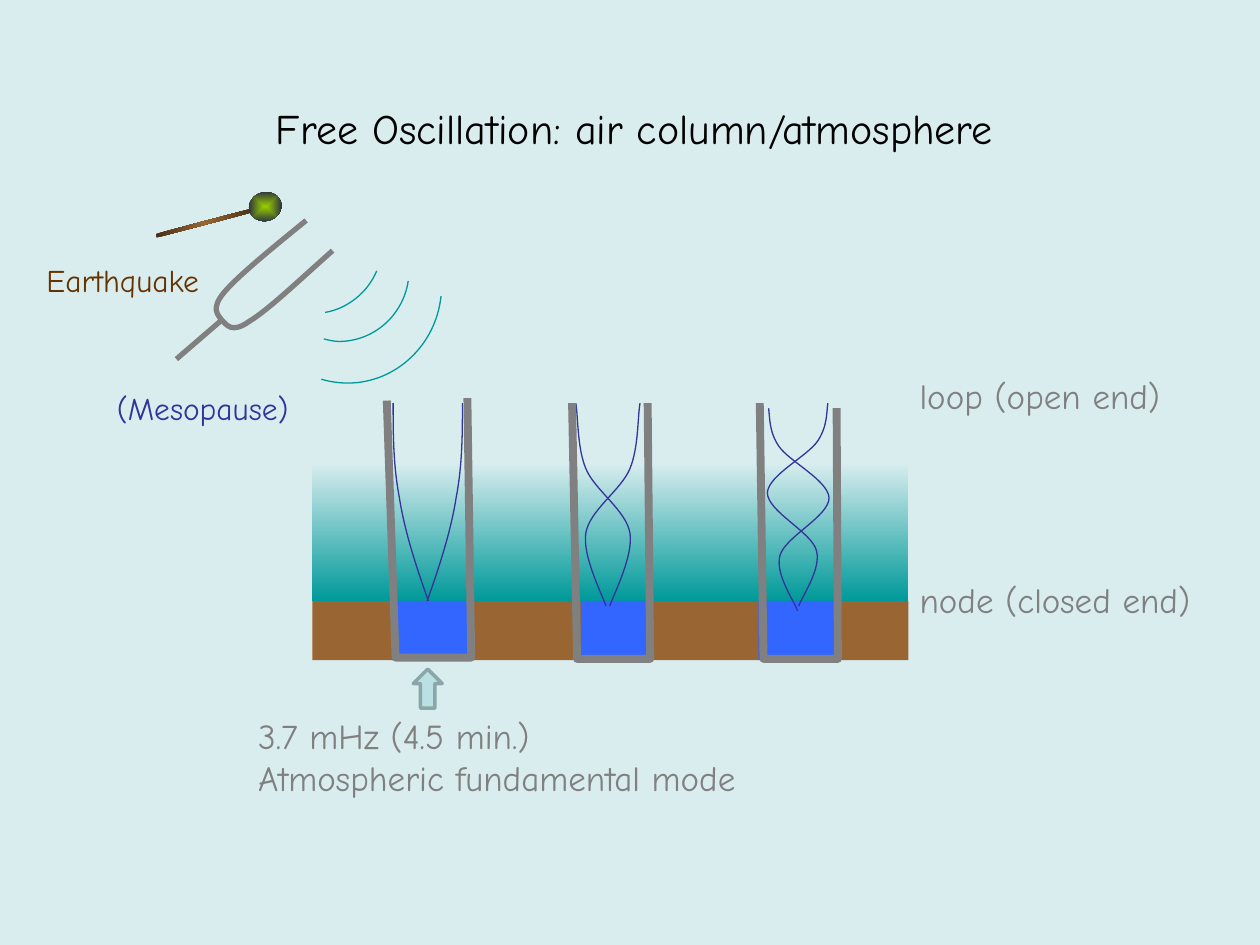
"""Build the slide on free oscillation of an air column and the atmosphere."""
from pptx import Presentation
from pptx.dml.color import RGBColor
from pptx.enum.shapes import MSO_CONNECTOR, MSO_SHAPE
from pptx.enum.text import MSO_ANCHOR, PP_ALIGN
from pptx.oxml import parse_xml
from pptx.oxml.ns import nsdecls, qn
from pptx.util import Inches, Pt

RECT, OVAL, ARROW = MSO_SHAPE.RECTANGLE, MSO_SHAPE.OVAL, MSO_SHAPE.UP_ARROW
STRAIGHT = MSO_CONNECTOR.STRAIGHT
LEFT, TOP = PP_ALIGN.LEFT, MSO_ANCHOR.TOP

THEME = {
    "font": "Comic Neue", "title": 24, "body": 20, "label": 18,
    "back": "D9EDEF", "ink": "000000", "grey": "808080", "wave": "333399",
    "quake": "663300", "soil": "996633", "bark": "472F18", "air": "009999",
    "water": "3366FF", "leaf": "99CC00", "night": "171749",
    "arrow": "BBE0E3", "edge": "8AA6A8",
}

TITLE = ("Free Oscillation: air column/atmosphere", (2.09, 0.76, 6.43, 0.5))
NOTES = [
    ("3.7 mHz (4.5 min.)\nAtmospheric fundamental mode", (1.95, 5.62, 4.33, 0.77), "body", "grey"),
    ("node (closed end)", (7.2, 4.54, 2.46, 0.43), "body", "grey"),
    ("loop (open end)", (7.2, 2.92, 2.15, 0.43), "body", "grey"),
    ("(Mesopause)", (0.83, 3.04, 1.65, 0.4), "label", "wave"),
    ("Earthquake", (0.27, 2.02, 1.53, 0.4), "label", "quake"),
]

GROUND = 4.77
LAND = (2.48, 4.73)
POOLS = [(3.11, 0.63), (4.61, 0.55), (6.02, 0.63)]
TUBES = [
    [(3.07, 3.18), (3.14, 5.22), (3.74, 5.22), (3.71, 3.16)],
    [(4.54, 3.2), (4.58, 5.23), (5.16, 5.23), (5.14, 3.2)],
    [(6.03, 3.2), (6.06, 5.23), (6.65, 5.23), (6.64, 3.24)],
]
MODES = [
    (3.395, 0, [(3.4, 4.77), (3.3, 4.49), (3.21, 4.21), (3.17, 3.95),
                (3.12, 3.69), (3.12, 3.44), (3.12, 3.2)]),
    (4.825, 0, [(4.81, 4.81), (4.78, 4.72), (4.62, 4.41), (4.65, 4.23),
                (4.68, 4.05), (4.93, 3.89), (5, 3.72),
                (5.07, 3.55), (5.06, 3.31), (5.08, 3.2)]),
    (6.335, 0.04, [(6.34, 4.81), (6.36, 4.74), (6.52, 4.52), (6.48, 4.37),
                   (6.44, 4.22), (6.09, 4.06), (6.09, 3.91),
                   (6.1, 3.77), (6.41, 3.62), (6.49, 3.5),
                   (6.57, 3.38), (6.56, 3.26), (6.57, 3.2)]),
]
FORK = [(2.43, 1.75), (2.16, 1.97), (1.89, 2.19), (1.78, 2.32),
        (1.67, 2.45), (1.73, 2.5), (1.76, 2.54),
        (1.8, 2.58), (1.84, 2.65), (1.98, 2.55),
        (2.13, 2.46), (2.38, 2.22), (2.64, 1.99)]
STEM = [(1.76, 2.54), (1.4, 2.85)]
SOUNDS = [
    [(2.99, 2.15), (2.92, 2.32), (2.76, 2.45), (2.58, 2.48)],
    [(3.24, 2.23), (3.2, 2.5), (2.97, 2.71), (2.69, 2.71),
     (2.65, 2.71), (2.61, 2.7), (2.57, 2.69)],
    [(3.5, 2.35), (3.46, 2.74), (3.14, 3.04), (2.76, 3.04),
     (2.69, 3.04), (2.62, 3.03), (2.55, 3.01)],
]


def hue(name):
    return RGBColor.from_string(THEME[name])


def write(shape, text, size="body", color="ink"):
    frame = shape.text_frame
    frame.word_wrap = True
    frame.vertical_anchor = TOP
    frame.text = text
    for para in frame.paragraphs:
        para.alignment = LEFT
        font = para.runs[0].font
        font.name, font.size = THEME["font"], Pt(THEME[size])
        font.color.rgb = hue(color)


def block(slide, kind, box, fill=None, edge=None, turn=0):
    shape = slide.shapes.add_shape(kind, *map(Inches, box))
    shape.shadow.inherit = False
    shape.rotation = turn
    if fill:
        shape.fill.solid()
        shape.fill.fore_color.rgb = hue(fill)
    if edge:
        shape.line.color.rgb = hue(edge)
        shape.line.width = Pt(2)
    else:
        shape.line.fill.background()
    return shape


def shade(shape, stops, way):
    marks = "".join(
        f'<a:gs pos="{pos * 1000}"><a:srgbClr val="{THEME[name]}"/></a:gs>'
        for pos, name in stops)
    shape.fill.background()
    props = shape.element.spPr
    props.replace(props.find(qn("a:noFill")), parse_xml(
        f'<a:gradFill {nsdecls("a")} rotWithShape="0">'
        f"<a:gsLst>{marks}</a:gsLst>{way}</a:gradFill>"))


def trace(slide, points, color, width, curved=True):
    spots = [(Inches(x), Inches(y)) for x, y in points]
    pen = slide.shapes.build_freeform(*spots[0])
    pen.add_line_segments(spots[1:], close=False)
    shape = pen.convert_to_shape()
    shape.shadow.inherit = False
    shape.fill.background()
    shape.line.color.rgb = hue(color)
    shape.line.width = Pt(width)
    if curved:
        route = next(shape.element.iter(qn("a:path")))
        steps = route.findall(qn("a:lnTo"))
        for i in range(0, len(steps), 3):
            curve = parse_xml(f'<a:cubicBezTo {nsdecls("a")}/>')
            steps[i].addprevious(curve)
            for step in steps[i:i + 3]:
                curve.append(step[0])
                route.remove(step)


def main():
    deck = Presentation()
    deck.slide_width, deck.slide_height = Inches(10), Inches(7.5)
    slide = deck.slides.add_slide(deck.slide_layouts[5])
    slide.background.fill.solid()
    slide.background.fill.fore_color.rgb = hue("back")

    text, box = TITLE
    head = slide.shapes.title
    head.left, head.top, head.width, head.height = map(Inches, box)
    write(head, text, size="title")

    left, width = LAND
    depth, rise = 0.47, 1.1
    block(slide, RECT, (left, GROUND, width, depth), "soil")
    sky = block(slide, RECT, (left, GROUND - rise, width, rise))
    shade(sky, [(0, "back"), (100, "air")], '<a:lin ang="5400000" scaled="0"/>')
    for left, width in POOLS:
        block(slide, RECT, (left, GROUND, width, depth), "water")

    for axis, drop, points in MODES:
        trace(slide, points, "wave", 0.75)
        trace(slide, [(2 * axis - x, y + drop) for x, y in points], "wave", 0.75)
    for points in TUBES:
        trace(slide, points, "grey", 4.5, curved=False)

    trace(slide, FORK, "grey", 3)
    ends = [Inches(v) for spot in STEM for v in spot]
    stem = slide.shapes.add_connector(STRAIGHT, *ends)
    stem.line.color.rgb = hue("grey")
    stem.line.width = Pt(3)
    stem.element.spPr.append(parse_xml(f'<a:effectLst {nsdecls("a")}/>'))
    for points in SOUNDS:
        trace(slide, points, "air", 0.75)

    stick = block(slide, RECT, (1.61, 1.37, 0.03, 0.8), turn=75.2)
    shade(stick, [(0, "bark"), (50, "soil"), (100, "bark")],
          '<a:lin ang="0" scaled="0"/>')
    ball = block(slide, OVAL, (1.99, 1.51, 0.23, 0.26), turn=75.2)
    shade(ball, [(0, "leaf"), (100, "night")],
          '<a:path path="shape"><a:fillToRect l="50000" t="50000" '
          'r="50000" b="50000"/></a:path>')
    block(slide, ARROW, (3.28, 5.31, 0.23, 0.31), "arrow", edge="edge")

    for text, box, size, color in NOTES:
        note = slide.shapes.add_textbox(*map(Inches, box))
        write(note, text, size=size, color=color)
    deck.save("out.pptx")


if __name__ == "__main__":
    main()
